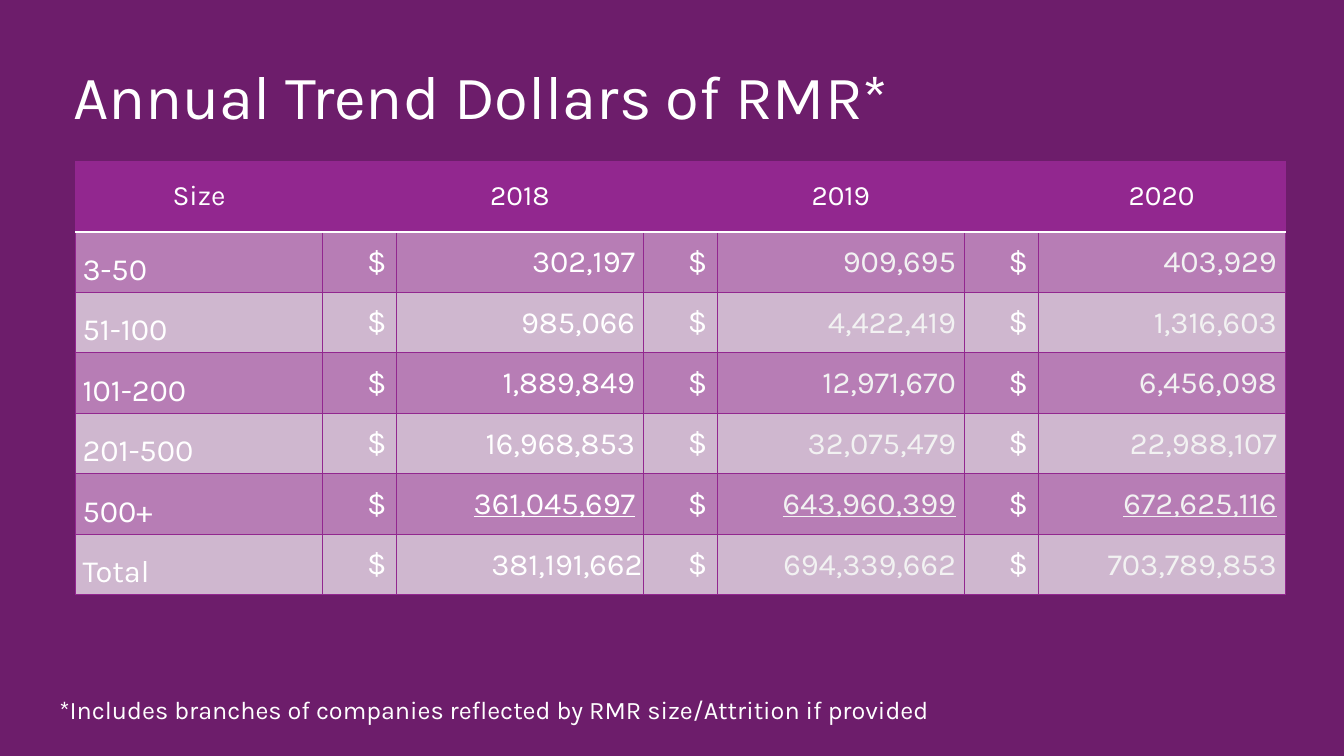
from lxml import etree
from pptx import Presentation
from pptx import util as u
from pptx.dml.color import RGBColor
from pptx.enum import text
from pptx.oxml import ns

BACKGROUND = RGBColor(0x6D, 0x1D, 0x6B)
PURPLE = RGBColor(0x92, 0x27, 0x8F)
DARK_BAND = RGBColor(0xB7, 0x7D, 0xB5)
LIGHT_BAND = RGBColor(0xCF, 0xB7, 0xCF)
WHITE = RGBColor(0xFF, 0xFF, 0xFF)
OFF_WHITE = RGBColor(0xF2, 0xF2, 0xF2)

YEARS = ["2018", "2019", "2020"]
DOLLARS = [
    ("3-50", "302,197", "909,695", "403,929"),
    ("51-100", "985,066", "4,422,419", "1,316,603"),
    ("101-200", "1,889,849", "12,971,670", "6,456,098"),
    ("201-500", "16,968,853", "32,075,479", "22,988,107"),
    ("500+", "361,045,697", "643,960,399", "672,625,116"),
    ("Total", "381,191,662", "694,339,662", "703,789,853"),
]
LABEL_MARGINS = (5, 3, 5, 3)
DOLLAR_MARGINS = (7.2, 3.6, 7.2, 3.6)
VALUE_MARGINS = (0.7, 0.7, 6, 0)
FLUSH_MARGINS = (0.7, 0.7, 0.7, 0)
LEFT, CENTER, RIGHT = text.PP_ALIGN.LEFT, text.PP_ALIGN.CENTER, text.PP_ALIGN.RIGHT
MIDDLE, BOTTOM = text.MSO_ANCHOR.MIDDLE, text.MSO_ANCHOR.BOTTOM


class SlideBuilder:
    font_name = "Karla"

    def __init__(self, presentation):
        self.slide = presentation.slides.add_slide(presentation.slide_layouts[5])
        fill = self.slide.background.fill
        fill.solid()
        fill.fore_color.rgb = BACKGROUND

    def set_text(self, frame, words, size, color=WHITE, align=LEFT, underline=False):
        paragraph = frame.paragraphs[0]
        paragraph.text = words
        paragraph.alignment = align
        font = paragraph.font
        font.name, font.size, font.bold = self.font_name, u.Pt(size), False
        font.color.rgb = color
        if underline:
            font.underline = True

    def title(self, words, left, top, width, height):
        shape = self.slide.shapes.title
        shape.left, shape.top = u.Pt(left), u.Pt(top)
        shape.width, shape.height = u.Pt(width), u.Pt(height)
        frame = shape.text_frame
        frame.auto_size = text.MSO_AUTO_SIZE.NONE
        frame.vertical_anchor = text.MSO_ANCHOR.TOP
        self.set_text(frame, words, 44)

    def note(self, words, left, top, width, height):
        box = self.slide.shapes.add_textbox(*map(u.Pt, (left, top, width, height)))
        box.text_frame.word_wrap = True
        self.set_text(box.text_frame, words, 18)

    def table(self, left, top, widths, heights):
        shape = self.slide.shapes.add_table(
            len(heights), len(widths), u.Pt(left), u.Pt(top),
            u.Pt(sum(widths)), u.Pt(sum(heights)))
        for column, width in zip(shape.table.columns, widths):
            column.width = u.Pt(width)
        for row, height in zip(shape.table.rows, heights):
            row.height = u.Pt(height)
        return shape.table

    def borders(self, cell, **special):
        properties = cell._tc.get_or_add_tcPr()
        for side in "LRTB":
            color, width = special.get(side, (PURPLE, 1))
            line = etree.SubElement(properties, ns.qn(f"a:ln{side}"), w=str(u.Pt(width)))
            solid = etree.SubElement(line, ns.qn("a:solidFill"))
            etree.SubElement(solid, ns.qn("a:srgbClr"), val=str(color))

    def cell(self, cell, words, fill, size=22, margins=DOLLAR_MARGINS, anchor=MIDDLE,
             borders=None, **style):
        self.borders(cell, **(borders or {}))
        cell.fill.solid()
        cell.fill.fore_color.rgb = fill
        cell.vertical_anchor = anchor
        (cell.margin_left, cell.margin_top,
         cell.margin_right, cell.margin_bottom) = map(u.Pt, margins)
        self.set_text(cell.text_frame, words, size, **style)


def main():
    presentation = Presentation()
    presentation.slide_width, presentation.slide_height = u.Pt(960), u.Pt(540)
    builder = SlideBuilder(presentation)
    builder.title("Annual Trend Dollars of RMR*", 45, 38, 882, 47)

    table = builder.table(54, 115.2, [176.4] + [52.8, 176.4] * 3, [50.4] + [43.2] * 6)
    rule = (WHITE, 1.5)
    headings = ["Size"]
    for year in YEARS:
        headings += ["", year]
    for column, heading in enumerate(headings):
        builder.cell(table.cell(0, column), heading, PURPLE, size=20, align=CENTER,
                     borders={"B": rule})

    for row, (size_range, *amounts) in enumerate(DOLLARS, start=1):
        band = DARK_BAND if row % 2 else LIGHT_BAND
        borders = {"T": rule} if row == 1 else {}
        builder.cell(table.cell(row, 0), size_range, band, margins=LABEL_MARGINS,
                     anchor=BOTTOM, borders=borders)
        for index, amount in enumerate(amounts):
            column = 2 * index + 1
            flush = size_range == "Total" and index == 0
            builder.cell(table.cell(row, column), "$", band, align=RIGHT, borders=borders)
            builder.cell(table.cell(row, column + 1), amount, band, align=RIGHT,
                         margins=FLUSH_MARGINS if flush else VALUE_MARGINS,
                         color=OFF_WHITE if index else WHITE,
                         underline=size_range == "500+", borders=borders)

    builder.note("*Includes branches of companies reflected by RMR size/Attrition if provided",
                 35.3, 492.5, 682.6, 28.8)
    presentation.save("out.pptx")


if __name__ == "__main__":
    main()
